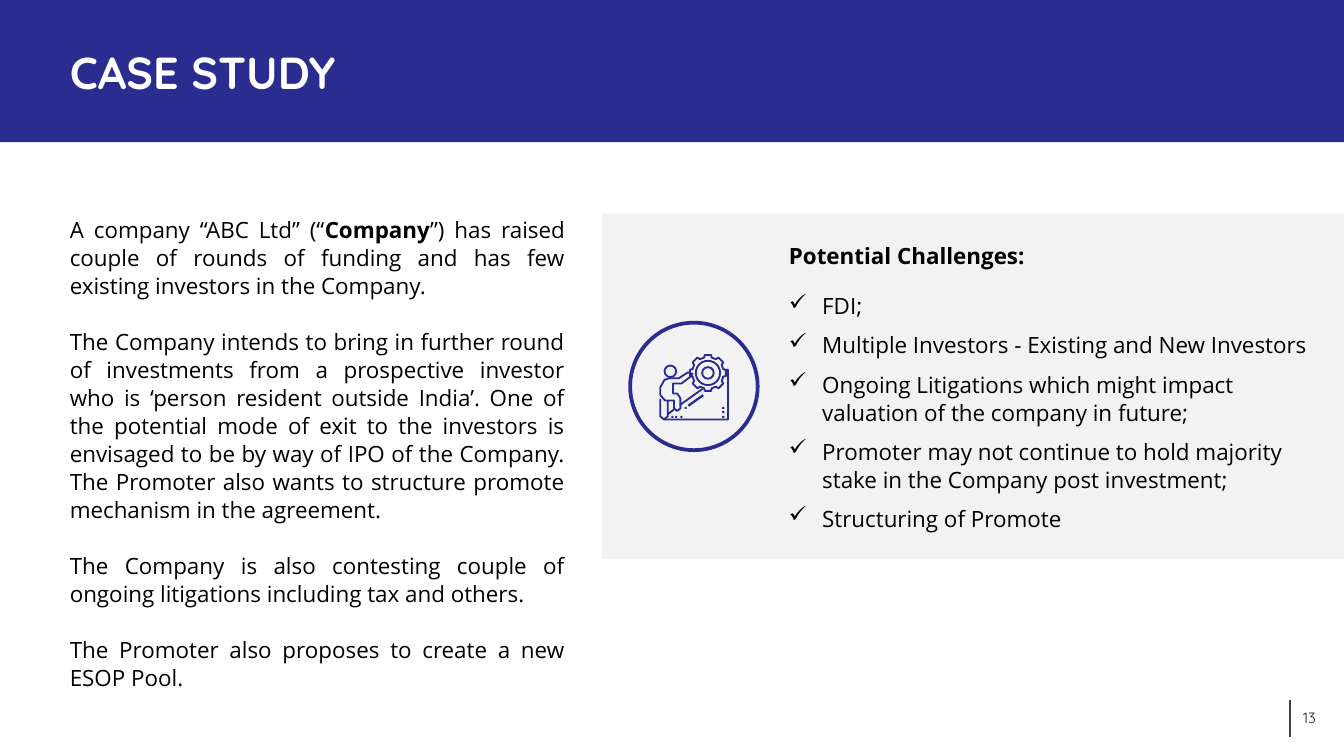
"""Build the case study slide with its challenges panel and icon."""
import math

from lxml import etree
from pptx import Presentation
from pptx import util as u
from pptx.dml.color import RGBColor
from pptx.enum import shapes, text
from pptx.oxml.ns import qn

INDIGO = RGBColor(0x2B, 0x2C, 0x90)
PALE = RGBColor(0xF2, 0xF2, 0xF2)
WHITE = RGBColor(0xFF, 0xFF, 0xFF)
BLACK = RGBColor(0, 0, 0)
CHARCOAL = RGBColor(0x26, 0x26, 0x26)
GREY = RGBColor(0x40, 0x40, 0x40)

deck = Presentation()
deck.slide_width, deck.slide_height = u.Cm(25.4), u.Cm(14.29)
slide = deck.slides.add_slide(deck.slide_layouts[6])


def add_preset(parent, kind, box, fill=None, line=None, weight=1):
    item = parent.add_shape(kind, *[u.Cm(v) for v in box])
    item.shadow.inherit = False
    if fill is None:
        item.fill.background()
    else:
        item.fill.solid()
        item.fill.fore_color.rgb = fill
    if line is None:
        item.line.fill.background()
    else:
        item.line.color.rgb = line
        item.line.width = u.Pt(weight)
    return item


def add_text(box, paragraphs, font, anchor=text.MSO_ANCHOR.TOP):
    frame = slide.shapes.add_textbox(*[u.Cm(v) for v in box]).text_frame
    frame.word_wrap = True
    frame.vertical_anchor = anchor
    for index, (runs, layout) in enumerate(paragraphs):
        paragraph = frame.paragraphs[0] if index == 0 else frame.add_paragraph()
        for name, value in layout.items():
            setattr(paragraph, name, value)
        for words, bold in runs:
            run = paragraph.add_run()
            run.text = words
            run.font.color.rgb = font["color"]
            for name, value in {"name": font["name"], "size": font["size"], "bold": bold}.items():
                setattr(run.font, name, value)
    return frame


RECT, OVAL = shapes.MSO_SHAPE.RECTANGLE, shapes.MSO_SHAPE.OVAL
heading_font = {"name": "Quicksand", "size": u.Pt(24), "color": WHITE}
body_font = {"name": "Open Sans", "size": u.Pt(12), "color": BLACK}
number_font = {"name": "Quicksand", "size": u.Pt(8), "color": CHARCOAL}

page_rule = slide.shapes.add_connector(
    shapes.MSO_CONNECTOR.STRAIGHT, u.Cm(24.38), u.Cm(13.23), u.Cm(24.38), u.Cm(13.94))
page_rule.line.color.rgb = GREY
page_rule.line.width = u.Pt(0.75)
etree.SubElement(page_rule._element.spPr, qn("a:effectLst"))

add_preset(slide.shapes, RECT, (0, 0, 25.4, 2.69), INDIGO)
add_text((1.07, 0.58, 22.86, 1.55), [([("CASE STUDY", True)], {})],
         heading_font, text.MSO_ANCHOR.MIDDLE)

story = [
    [("A company “ABC Ltd” (“", False), ("Company", True),
     ("”) has raised couple of rounds of funding and has few existing investors "
      "in the Company.", False)],
    [("The Company intends to bring in further round of investments from a prospective "
      "investor who is ‘person resident outside India’. One of the potential mode of exit "
      "to the investors is envisaged to be by way of IPO of the Company. The Promoter also "
      "wants to structure promote mechanism in the agreement.", False)],
    [("The Company is also contesting couple of ongoing litigations including tax "
      "and others.", False)],
    [("The Promoter also proposes to create a new ESOP Pool.", False)],
]
story_layout = {"alignment": text.PP_ALIGN.JUSTIFY, "line_spacing": u.Pt(15)}
add_text((1.07, 3.94, 9.86, 9.32),
         [(runs, {**story_layout, "space_before": u.Pt(15 if i else 0)})
          for i, runs in enumerate(story)], body_font)

add_preset(slide.shapes, RECT, (11.38, 4.04, 14.02, 6.53), PALE)
challenges = [
    "FDI;",
    "Multiple Investors - Existing and New Investors",
    "Ongoing Litigations which might impact valuation of the company in future;",
    "Promoter may not continue to hold majority stake in the Company post investment;",
    "Structuring of Promote",
]
challenge_layout = {"line_spacing": u.Pt(15), "space_before": u.Pt(3), "space_after": u.Pt(3)}
challenge_frame = add_text(
    (14.66, 4.45, 10.74, 5.74),
    [([("Potential Challenges:", True)], {"space_after": u.Pt(9)})]
    + [([(words, False)], challenge_layout) for words in challenges], body_font)
for paragraph in challenge_frame.paragraphs[1:]:
    properties = paragraph._p.get_or_add_pPr()
    properties.set("marL", str(u.Cm(0.63)))
    properties.set("indent", str(u.Cm(-0.63)))
    etree.SubElement(properties, qn("a:buChar")).set("char", "✓")

icon = slide.shapes.add_group_shape().shapes
add_preset(icon, OVAL, (11.91, 6.1, 2.41, 2.41), line=INDIGO, weight=2)
icon_left, icon_top = 12.47, 6.68
gear_x, gear_y, teeth = 91, 37, 8
gear = []
for tooth in range(teeth):
    for radius, offset in ((30, -14), (35, -10), (35, 10), (30, 14)):
        angle = math.radians(tooth * 360 / teeth + offset)
        gear.append((round(gear_x + radius * math.cos(angle)),
                     round(gear_y + radius * math.sin(angle))))
worker = [(18, 47), (36, 47), (53, 36), (62, 39), (58, 44), (41, 57), (25, 57), (25, 76),
          (33, 76), (39, 85), (39, 104), (33, 109), (27, 104), (27, 89), (10, 89),
          (1, 79), (1, 64), (9, 50)]
block = [(1, 86), (1, 119), (8, 125), (129, 125), (129, 31), (122, 31)]
post = [(15, 90), (15, 119), (8, 125)]
lower_ramp = [(15, 115), (27, 106)]
upper_ramp = [(39, 97), (81, 67)]
ramp_bar = [(54, 99), (82, 79)]
for points, closed, weight in ((gear, True, 1), (worker, True, 1), (block, False, 1),
                               (post, False, 1), (lower_ramp, False, 1),
                               (upper_ramp, False, 1), (ramp_bar, False, 1.25)):
    builder = icon.build_freeform(*points[0], scale=u.Cm(0.01))
    builder.add_line_segments(points[1:], close=closed)
    outline = builder.convert_to_shape(u.Cm(icon_left), u.Cm(icon_top))
    outline.shadow.inherit = False
    outline.fill.background()
    outline.line.color.rgb = INDIGO
    outline.line.width = u.Pt(weight)
for x, y, radius in ((20, 34, 11), (gear_x, gear_y, 23), (gear_x, gear_y, 11)):
    add_preset(icon, OVAL, (icon_left + (x - radius) / 100, icon_top + (y - radius) / 100,
                            radius / 50, radius / 50), line=INDIGO)
for x, y in ((22, 118), (29, 118), (39, 118), (47, 101), (118, 118), (118, 109), (118, 101)):
    add_preset(icon, RECT, (icon_left + x / 100, icon_top + y / 100, 0.04, 0.04), INDIGO)

add_text((19.2, 13.18, 5.92, 0.76),
         [([("13", False)], {"alignment": text.PP_ALIGN.RIGHT})],
         number_font, text.MSO_ANCHOR.MIDDLE)

deck.save("out.pptx")
